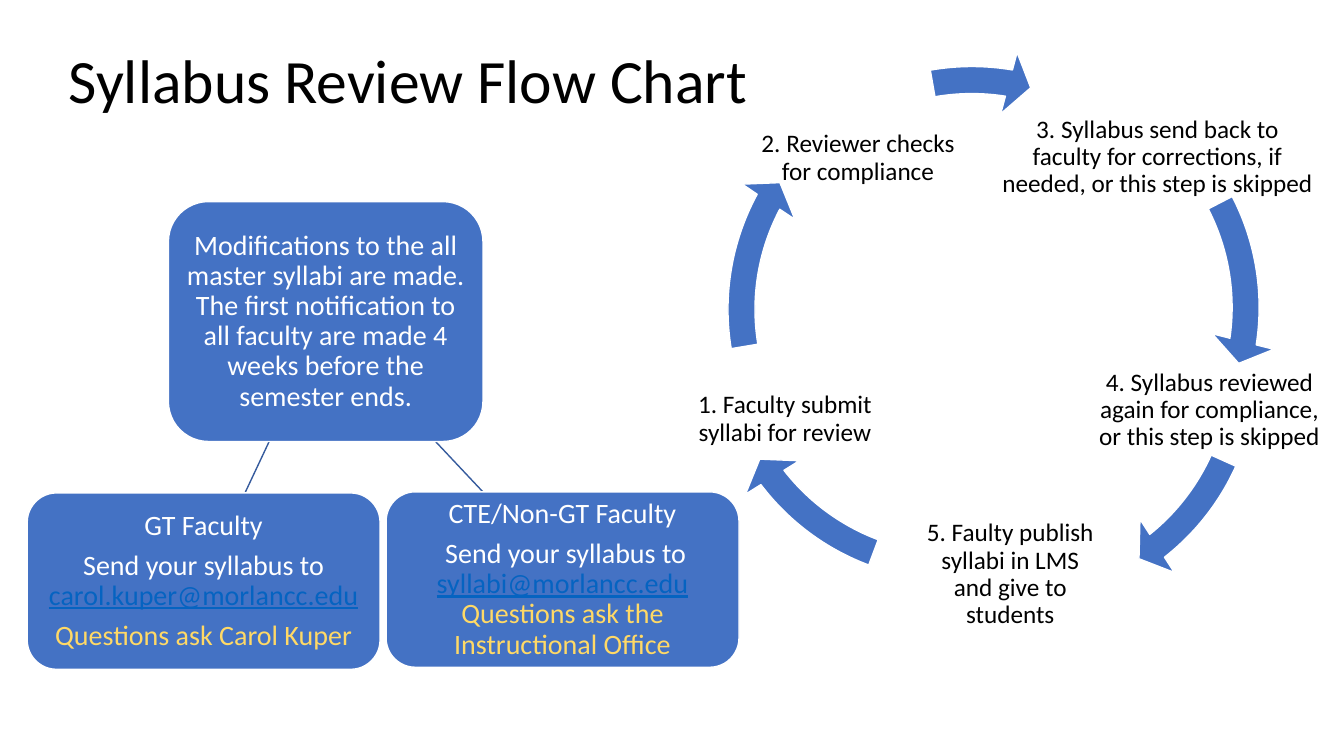
from pptx import Presentation
from pptx.dml.color import RGBColor
from pptx.enum.shapes import MSO_CONNECTOR, MSO_SHAPE
from pptx.enum.text import MSO_ANCHOR as Anchor, PP_ALIGN as Align
from pptx.oxml.ns import qn
from pptx.util import Inches, Pt
from lxml import etree

FONT = "Calibri"
BLUE, DARK_BLUE, LINK, GOLD = "4472C4", "365B9D", "0563C1", "FFD966"
WHITE, BLACK = "FFFFFF", "000000"

TITLE = "Syllabus Review Flow Chart"

# Hierarchy boxes: (left, top, width, height), paragraphs of (text, colour) runs
NOTICE_BOXES = [
    ((1.67, 2, 3.12, 2.38), [
        [("Modifications to the all master syllabi are made. The first notification "
          "to all faculty are made 4 weeks before the semester ends.", WHITE)],
    ]),
    ((3.83, 4.88, 3.5, 1.74), [
        [("CTE/Non-GT Faculty", WHITE)],
        [(" Send your syllabus to ", WHITE), ("syllabi@morlancc.edu", LINK),
         (" Questions ask the Instructional Office", GOLD)],
    ]),
    ((0.27, 4.89, 3.5, 1.75), [
        [("GT Faculty", WHITE)],
        [("Send your syllabus to ", WHITE), ("carol.kuper@morlancc.edu", LINK)],
        [("Questions ask Carol Kuper", GOLD)],
    ]),
]
BRANCHES = [(4.32, 4.38, 4.79, 4.88), (2.67, 4.38, 2.43, 4.89)]

# Cycle steps: text and its box, then the arrow's corner and its start and end in degrees
STEPS = [
    ("3. Syllabus send back to faculty for corrections, if needed, or this step is skipped",
     (9.91, 1.12, 3.14, 0.88), (7.51, 0.47), (332.71, 8.6)),
    ("4. Syllabus reviewed again for compliance, or this step is skipped",
     (10.82, 3.61, 2.35, 0.92), (7.49, 1.06), (24.26, 51.6)),
    ("5. Faulty publish syllabi in LMS and give to students",
     (9.11, 5.01, 1.82, 1.38), (6.88, 0.78), (110.57, 142.54)),
    ("1. Faculty submit syllabi for review",
     (6.79, 3.74, 1.99, 0.84), (7.04, 0.49), (170.67, 208.13)),
    ("2. Reviewer checks for compliance",
     (7.44, 1.05, 2.14, 1.04), (7.06, 0.48), (260.1, 279.33)),
]
RING_SIZE = 5.16
RING_THICKNESS, HEAD_ANGLE, HEAD_WIDTH = 0.052, 5.6, 0.061
DEGREE = 0.6  # one degree in adjustment units


def color(value):
    return RGBColor.from_string(value)


def inches(values):
    return [Inches(value) for value in values]


def add_run(para, text, size, ink):
    span = para.add_run()
    span.text = text
    span.font.name = FONT
    span.font.size = Pt(size)
    span.font.color.rgb = color(ink)
    span.font.underline = True if ink == LINK else None


def write(box, paragraphs, size, inset):
    frame = box.text_frame
    frame.word_wrap = True
    frame.vertical_anchor = Anchor.MIDDLE
    frame.margin_left = frame.margin_right = Inches(inset)
    frame.margin_top = frame.margin_bottom = Inches(inset)
    for index, runs in enumerate(paragraphs):
        para = frame.add_paragraph() if index else frame.paragraphs[0]
        para.alignment = Align.CENTER
        para.line_spacing = 0.9
        para.space_after = Pt(size * 0.35)
        for text, ink in runs:
            add_run(para, text, size, ink)


def add_blue_shape(page, kind, area):
    shape = page.shapes.add_shape(kind, *inches(area))
    shape.shadow.inherit = False
    shape.fill.solid()
    shape.fill.fore_color.rgb = color(BLUE)
    shape.line.color.rgb = color(WHITE)
    shape.line.width = Pt(1)
    return shape


deck = Presentation()
deck.slide_width, deck.slide_height = Inches(13.33), Inches(7.5)
page = deck.slides.add_slide(deck.slide_layouts[5])

# Title
title = page.shapes.title
title.left, title.top, title.width, title.height = inches((0.58, 0.1, 11.5, 1.45))
title.text_frame.vertical_anchor = Anchor.MIDDLE
heading = title.text_frame.paragraphs[0]
heading.alignment = Align.LEFT
heading.line_spacing = 0.9
add_run(heading, TITLE, 44, BLACK)

# Branches of the hierarchy
for ends in BRANCHES:
    branch = page.shapes.add_connector(MSO_CONNECTOR.STRAIGHT, *inches(ends))
    branch.line.color.rgb = color(DARK_BLUE)
    branch.line.width = Pt(1)
    etree.SubElement(branch._element.spPr, qn("a:effectLst"))

# Hierarchy boxes
for area, paragraphs in NOTICE_BOXES:
    box = add_blue_shape(page, MSO_SHAPE.ROUNDED_RECTANGLE, area)
    write(box, paragraphs, 20, 0.06)

# Review cycle
for text, area, corner, (start, end) in STEPS:
    label = page.shapes.add_textbox(*inches(area))
    write(label, [[(text, BLACK)]], 18, 0.03)
    arrow = add_blue_shape(page, MSO_SHAPE.CIRCULAR_ARROW, (*corner, RING_SIZE, RING_SIZE))
    settings = (RING_THICKNESS, HEAD_ANGLE * DEGREE, end * DEGREE, start * DEGREE, HEAD_WIDTH)
    for index, setting in enumerate(settings):
        arrow.adjustments[index] = setting

deck.save("out.pptx")
